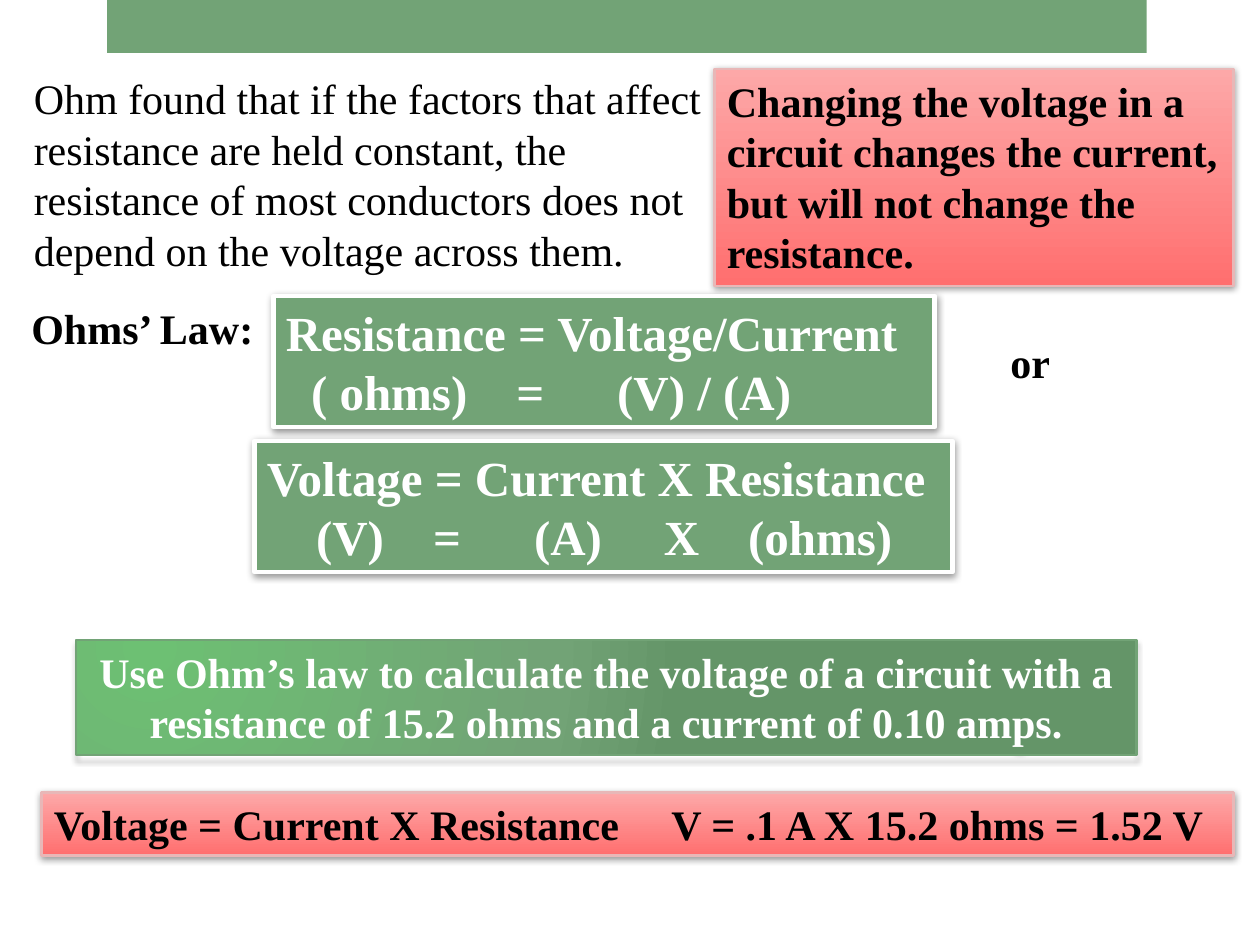
from lxml import etree
from pptx import Presentation
from pptx import util as u
from pptx.dml.color import RGBColor
from pptx.enum import shapes, text
from pptx.oxml.ns import qn

GREEN, WHITE, BLACK = "72A376", "FFFFFF", "000000"
PINK = [(0, "FDA8A8"), (100, "FF6F6F")]
PINK_LINE = "E8B7B7"
GLOW = [(0, "6DC073"), (76, GREEN), (100, "649568")]
SOFT_SHADOW = (40, 4, 1, 88)  # opacity %, blur pt, distance pt, angle
DEEP_SHADOW = (35, 3, 3, 90)


def rgb(value):
    return RGBColor.from_string(value)


def child(parent, tag, **attrs):
    return etree.SubElement(parent, qn("a:" + tag),
                            {name: str(value) for name, value in attrs.items()})


class Board:
    """Draws on one slide; lengths are percent of the slide's width or height."""
    font = "Times New Roman"

    def __init__(self, prs):
        self.width, self.height = prs.slide_width, prs.slide_height
        self.slide = prs.slides.add_slide(prs.slide_layouts[6])

    def place(self, x, y, w, h):
        return [u.Emu(round(share * side / 100)) for share, side in
                zip((x, y, w, h), (self.width, self.height) * 2)]

    def gradient(self, sp, stops, radial):
        sp.fill.gradient()
        grad = sp._element.spPr.find(qn("a:gradFill"))
        grad.clear()
        stop_list = child(grad, "gsLst")
        for position, colour in stops:
            stop = child(stop_list, "gs", pos=position * 1000)
            child(stop, "srgbClr", val=colour)
        if radial:
            focus = child(grad, "path", path="circle")
            child(focus, "fillToRect", l=15000, t=15000, r=100000, b=100000)
        else:
            child(grad, "lin", ang=90 * 60000, scaled=0)

    def shadow(self, sp, opacity, blur, distance, angle):
        effects = sp._element.spPr.find(qn("a:effectLst"))
        outer = child(effects, "outerShdw", blurRad=u.Pt(blur), dist=u.Pt(distance),
                      dir=angle * 60000, algn="ctr", rotWithShape=0)
        child(child(outer, "srgbClr", val=BLACK), "alpha", val=opacity * 1000)

    def box(self, area, fill, line=None, line_width=1.25, shadow=None, radial=False):
        """Rectangle whose fill is a colour or a list of gradient stops."""
        sp = self.slide.shapes.add_shape(shapes.MSO_SHAPE.RECTANGLE, *self.place(*area))
        sp.shadow.inherit = False
        if isinstance(fill, str):
            sp.fill.solid()
            sp.fill.fore_color.rgb = rgb(fill)
        else:
            self.gradient(sp, fill, radial)
        if line:
            sp.line.color.rgb = rgb(line)
            sp.line.width = u.Pt(line_width)
        else:
            sp.line.fill.background()
        if shadow:
            self.shadow(sp, *shadow)
        return sp

    def label(self, area, line, bold=True):
        sp = self.slide.shapes.add_textbox(*self.place(*area))
        self.add_lines(sp, [line], bold=bold)

    def add_lines(self, sp, lines, colour=BLACK, size=24, bold=True, tabs=(),
                  align=text.PP_ALIGN.LEFT):
        tf = sp.text_frame
        tf.word_wrap = True
        tf.vertical_anchor = text.MSO_ANCHOR.TOP
        for i, line in enumerate(lines):
            p = tf.add_paragraph() if i else tf.paragraphs[0]
            p.alignment = align
            if "\t" in line:
                tab_list = child(p._p.get_or_add_pPr(), "tabLst")
                for tab in tabs:
                    child(tab_list, "tab", pos=round(tab * self.width / 100), algn="l")
            r = p.add_run()
            r.text = line
            r.font.name, r.font.size, r.font.bold = self.font, u.Pt(size), bold
            r.font.color.rgb = rgb(colour)

    def formula(self, area, lines, tabs):
        sp = self.box(area, GREEN, WHITE, 2.75, SOFT_SHADOW)
        self.add_lines(sp, lines, WHITE, 28, tabs=tabs)

    def pink_note(self, area, line, tabs=()):
        sp = self.box(area, PINK, PINK_LINE, shadow=SOFT_SHADOW)
        self.add_lines(sp, [line], tabs=tabs)

    def question(self, area, line):
        sp = self.box(area, GLOW, GREEN, shadow=DEEP_SHADOW, radial=True)
        self.add_lines(sp, [line], WHITE, align=text.PP_ALIGN.CENTER)


def main():
    prs = Presentation()
    prs.slide_width, prs.slide_height = u.Inches(10), u.Inches(7.5)
    board = Board(prs)

    board.box((8.5, 0, 82.5, 5.6), GREEN)
    board.label((1.5, 31.33, 20.2, 6.67), "Ohms’ Law:")
    board.label((1.7, 7.07, 56.4, 22.93),
                "Ohm found that if the factors that affect resistance are held constant, "
                "the resistance of most conductors does not depend on the voltage "
                "across them.", bold=False)
    board.pink_note((56.7, 7.33, 41.2, 22.93),
                    "Changing the voltage in a circuit changes the current, "
                    "but will not change the resistance.")
    board.formula((21.7, 31.33, 52.5, 13.87),
                  ["Resistance = Voltage/Current", "\t( ohms)\t=\t(V) / (A)"],
                  tabs=(2, 18.3, 26.3))
    board.formula((20.2, 46.67, 55.4, 13.87),
                  ["Voltage = Current X Resistance", "\t(V)\t=\t(A)\tX\t(ohms)"],
                  tabs=(3.9, 13.2, 21.2, 31.5, 38.2))
    board.label((79.2, 34.93, 6.7, 6.67), "or")
    board.question((6, 67.73, 84.2, 12.13),
                   "Use Ohm’s law to calculate the voltage of a circuit with a "
                   "resistance of 15.2 ohms and a current of 0.10 amps.")
    board.pink_note((3.3, 83.87, 94.6, 6.67),
                    "Voltage = Current X Resistance\tV = .1 A X 15.2 ohms = 1.52 V",
                    tabs=(49,))
    prs.save("out.pptx")


if __name__ == "__main__":
    main()
